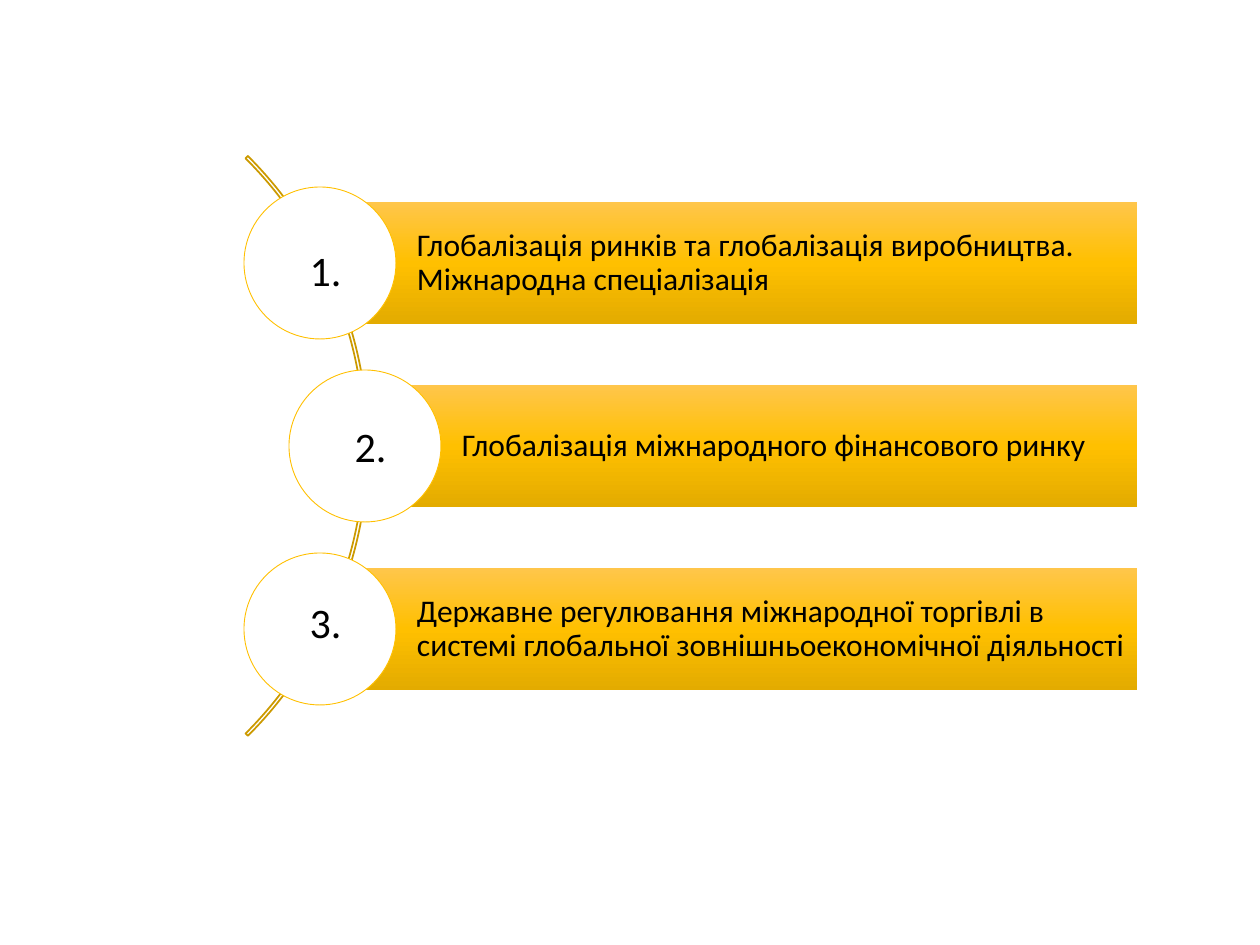
import copy

import pptx
import pptx.util
import pptx.dml.color
import pptx.enum.shapes
import pptx.enum.text
import pptx.oxml.ns

# Content: number, topic, shift of the row to the right in px
ROWS = [
    ("1.", "Глобалізація ринків та глобалізація виробництва. Міжнародна спеціалізація", 0),
    ("2.", "Глобалізація міжнародного фінансового ринку", 45),
    ("3.", "Державне регулювання міжнародної торгівлі в системі "
           "глобальної зовнішньоекономічної діяльності", 0),
]
COLORS = {"arc": "CC9A00", "ring": "FFC000", "disc": "FFFFFF", "text": "000000"}
FADE = [(0, "FFC64B"), (0.5, "FFC000"), (1, "E3AB00")]
FONT = "Calibri"

# Layout in px
PX = 914400 // 126
WIDTH, HEIGHT = 1260, 945
ARC = (-452, 36, 820, 820)
MID_X, MID_Y, STEP = 320, 263, 183
DISC, BAR_H, RIGHT = 152, 122, 1137
NUM_W, NUM_H, NUM_Y, NUM_STEP = 87, 63, 238, 176
INSET, PAD = 97, 6

KIND = pptx.enum.shapes.MSO_SHAPE
ALIGN = pptx.enum.text.PP_ALIGN
qn = pptx.oxml.ns.qn


def rgb(code):
    return pptx.dml.color.RGBColor.from_string(code)


def emu(*vals):
    return [v * PX for v in vals]


def draw(kind, box, line=None, width=1):
    shape = slide.shapes.add_shape(kind, *emu(*box))
    shape.shadow.inherit = False
    if line:
        shape.line.color.rgb = rgb(COLORS[line])
        shape.line.width = pptx.util.Pt(width)
    else:
        shape.line.fill.background()
    return shape


def fade(shape):
    fill = shape.fill
    fill.gradient()
    fill.gradient_angle = 270
    stops = shape._element.spPr.find(qn("a:gradFill")).find(qn("a:gsLst"))
    stops.insert(1, copy.deepcopy(stops[0]))
    for stop, (pos, code) in zip(fill.gradient_stops, FADE):
        stop.position = pos
        stop.color.rgb = rgb(code)


def write(shape, text, size, align):
    frame = shape.text_frame
    frame.word_wrap = True
    para = frame.paragraphs[0]
    para.text = text
    para.alignment = align
    para.font.size = pptx.util.Pt(size)
    para.font.name = FONT
    para.font.color.rgb = rgb(COLORS["text"])
    return frame, para


deck = pptx.Presentation()
deck.slide_width, deck.slide_height = emu(WIDTH, HEIGHT)
slide = deck.slides.add_slide(deck.slide_layouts[6])

# Arc behind the rows
arc = draw(KIND.BLOCK_ARC, ARC, "arc")
arc.fill.background()
for i, val in enumerate((189, 27, 0.004)):
    arc.adjustments[i] = val

# Bars and discs
for i, (num, topic, shift) in enumerate(ROWS):
    x, y = MID_X + shift, MID_Y + i * STEP
    bar = draw(KIND.RECTANGLE, (x, y - BAR_H // 2, RIGHT - x, BAR_H))
    fade(bar)
    frame, para = write(bar, topic, 18, ALIGN.LEFT)
    frame.vertical_anchor = pptx.enum.text.MSO_ANCHOR.MIDDLE
    frame.margin_left = INSET * PX
    frame.margin_right = frame.margin_top = frame.margin_bottom = PAD * PX
    para.line_spacing = 0.9

    disc = draw(KIND.OVAL, (x - DISC // 2, y - DISC // 2, DISC, DISC), "ring", 0.5)
    disc.fill.solid()
    disc.fill.fore_color.rgb = rgb(COLORS["disc"])

# Numbers
for i, (num, topic, shift) in enumerate(ROWS):
    box = (MID_X + shift - 38, NUM_Y + i * NUM_STEP, NUM_W, NUM_H)
    write(slide.shapes.add_textbox(*emu(*box)), num, 24, ALIGN.CENTER)

deck.save("out.pptx")
